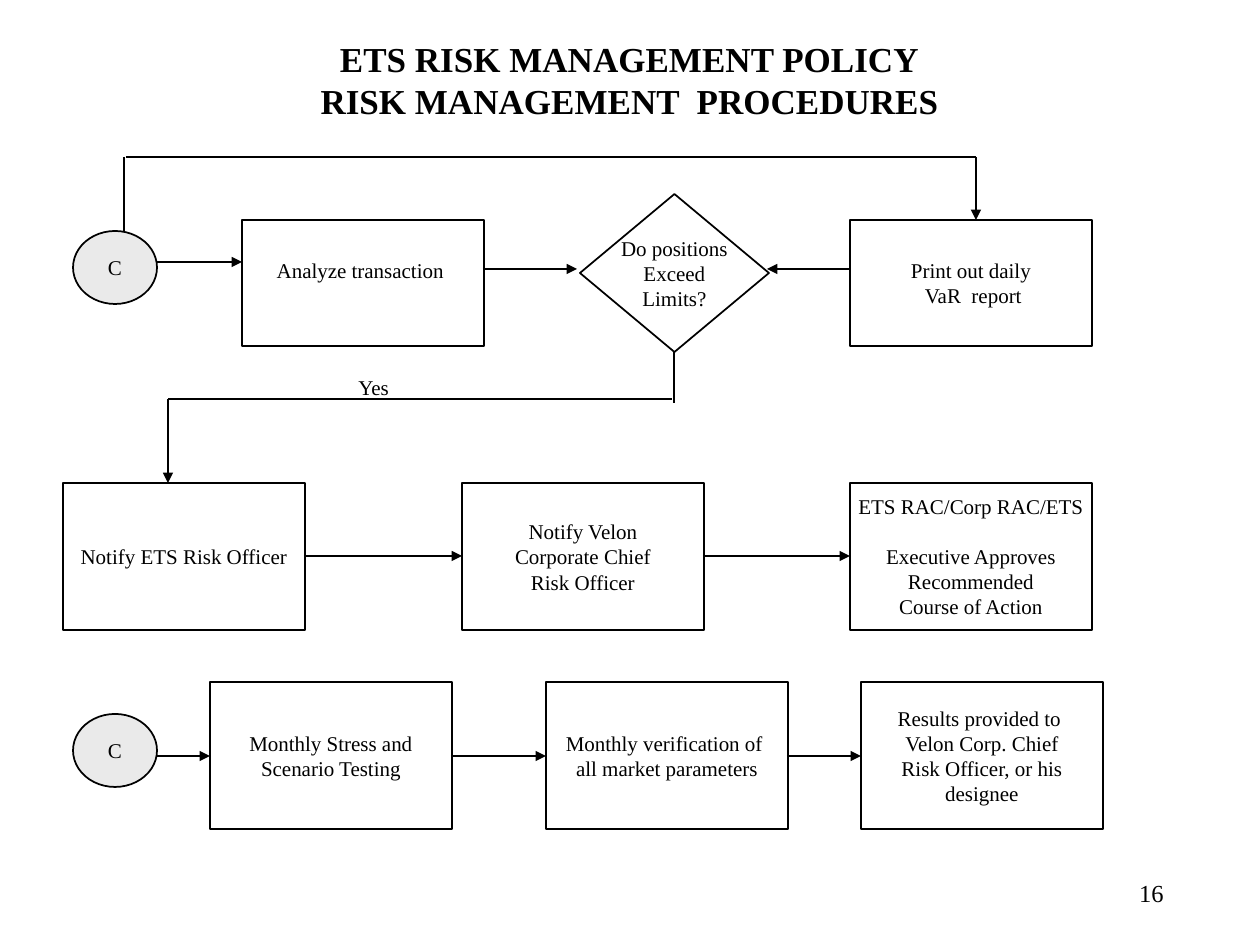
from dataclasses import dataclass

import pptx
import pptx.dml.color
import pptx.enum.shapes
import pptx.enum.text
import pptx.oxml
import pptx.oxml.ns
import pptx.util

PX = 914400 / 126  # EMU per px
COLORS = {"ink": "000000", "paper": "FFFFFF", "circle": "EAEAEA"}
FONT = "Times New Roman"
BOX_WIDTH = 242
SHAPES = pptx.enum.shapes.MSO_SHAPE
ALIGN = pptx.enum.text.PP_ALIGN
ANCHOR = pptx.enum.text.MSO_ANCHOR


@dataclass
class Node:
    """A flowchart step with one line of text per paragraph."""
    left: int
    top: int
    width: int
    height: int
    lines: list[str]
    kind: int = SHAPES.FLOWCHART_PROCESS
    fill: str = "paper"
    first_gap: int = 0  # points after the first line
    lift: int = 0  # extra bottom inset in px


@dataclass
class Link:
    x1: int
    y1: int
    x2: int
    y2: int
    arrow: bool = True


def emu(*lengths: int) -> list[int]:
    return [pptx.util.Emu(round(length * PX)) for length in lengths]


def rgb(name: str) -> pptx.dml.color.RGBColor:
    return pptx.dml.color.RGBColor.from_string(COLORS[name])


def write_text(shape, lines: list[str], size: int = 12, bold: bool = False,
               align=ALIGN.CENTER, anchor=ANCHOR.MIDDLE, wrap: bool = True,
               first_gap: int = 0, lift: int = 0) -> None:
    frame = shape.text_frame
    frame.auto_size = pptx.enum.text.MSO_AUTO_SIZE.NONE
    frame.word_wrap = wrap
    frame.vertical_anchor = anchor
    frame.margin_left = frame.margin_right = pptx.util.Inches(0.1)
    frame.margin_top = pptx.util.Inches(0.05)
    frame.margin_bottom = pptx.util.Inches(0.05) + emu(lift)[0]
    for index, line in enumerate(lines):
        paragraph = frame.paragraphs[0] if index == 0 else frame.add_paragraph()
        paragraph.alignment = align
        if index == 0 and first_gap:
            paragraph.space_after = pptx.util.Pt(first_gap)
        run = paragraph.add_run()
        run.text = line
        run.font.name = FONT
        run.font.size = pptx.util.Pt(size)
        run.font.bold = bold
        run.font.color.rgb = rgb("ink")


def style_line(line) -> None:
    line.color.rgb = rgb("ink")
    line.width = pptx.util.Pt(1)


def draw_node(slide, node: Node) -> None:
    shape = slide.shapes.add_shape(
        node.kind, *emu(node.left, node.top, node.width, node.height))
    shape.shadow.inherit = False
    shape.fill.solid()
    shape.fill.fore_color.rgb = rgb(node.fill)
    style_line(shape.line)
    write_text(shape, node.lines, wrap=False,
               first_gap=node.first_gap, lift=node.lift)


def draw_link(slide, link: Link) -> None:
    connector = slide.shapes.add_connector(
        pptx.enum.shapes.MSO_CONNECTOR.STRAIGHT,
        *emu(link.x1, link.y1, link.x2, link.y2))
    style_line(connector.line)
    if link.arrow:
        line = connector.line._get_or_add_ln()
        tail = pptx.oxml.parse_xml(
            f'<a:tailEnd {pptx.oxml.ns.nsdecls("a")} type="triangle"/>')
        line.append(tail)
    connector._element.spPr.append(pptx.oxml.parse_xml(
        f'<a:effectLst {pptx.oxml.ns.nsdecls("a")}/>'))


def draw_label(slide, left: int, top: int, width: int, height: int,
               text: str, **text_format) -> None:
    label = slide.shapes.add_textbox(*emu(left, top, width, height))
    write_text(label, [text], **text_format)


def circle(top: int) -> Node:
    return Node(73, top, 84, 73, ["C"], SHAPES.FLOWCHART_CONNECTOR, "circle")


def box(left: int, top: int, height: int, lines: list[str], **options) -> Node:
    return Node(left, top, BOX_WIDTH, height, lines, **options)


NODES = [
    # Daily check
    circle(231),
    box(242, 220, 126, ["Analyze transaction "], lift=25),
    Node(580, 194, 189, 158, ["Do positions", "Exceed", "Limits?"],
         SHAPES.FLOWCHART_DECISION),
    box(850, 220, 126, ["Print out daily", " VaR  report"]),
    # Escalation
    box(63, 483, 147, ["Notify ETS Risk Officer"]),
    box(462, 483, 147, ["Notify Velon", "Corporate Chief", "Risk Officer"]),
    box(850, 483, 147, ["ETS RAC/Corp RAC/ETS", "Executive Approves",
                        "Recommended", "Course of Action"], first_gap=14),
    # Monthly work
    circle(714),
    box(210, 682, 147, ["Monthly Stress and", "Scenario Testing"]),
    box(546, 682, 147, ["Monthly verification of ", "all market parameters"]),
    box(861, 682, 147, ["Results provided to ", "Velon Corp. Chief",
                        "Risk Officer, or his", "designee"]),
]

LINKS = [
    # Daily check
    Link(157, 262, 242, 262),
    Link(483, 269, 577, 269),
    Link(850, 269, 767, 269),
    # Loop from the circle to the report
    Link(976, 157, 126, 157, arrow=False),
    Link(124, 157, 124, 231, arrow=False),
    Link(976, 157, 976, 220),
    # Yes branch
    Link(674, 351, 674, 403, arrow=False),
    Link(672, 399, 168, 399, arrow=False),
    Link(168, 399, 168, 483),
    # Escalation
    Link(304, 556, 462, 556),
    Link(703, 556, 850, 556),
    # Monthly work
    Link(157, 756, 210, 756),
    Link(451, 756, 546, 756),
    Link(787, 756, 861, 756),
]


def main() -> None:
    presentation = pptx.Presentation()
    presentation.slide_width, presentation.slide_height = emu(1260, 945)
    slide = presentation.slides.add_slide(presentation.slide_layouts[5])

    # Title
    title = slide.shapes.title
    title.left, title.top, title.width, title.height = emu(94, 22, 1071, 116)
    write_text(title, ["ETS RISK MANAGEMENT POLICY",
                       "RISK MANAGEMENT  PROCEDURES"], size=20, bold=True)

    # Flowchart
    for node in NODES:
        draw_node(slide, node)
    for link in LINKS:
        draw_link(slide, link)

    # Branch label and page number
    draw_label(slide, 346, 368, 63, 38, "Yes",
               align=ALIGN.LEFT, anchor=ANCHOR.TOP)
    draw_label(slide, 914, 861, 262, 63, "16", size=14, align=ALIGN.RIGHT)

    presentation.save("out.pptx")


if __name__ == "__main__":
    main()
